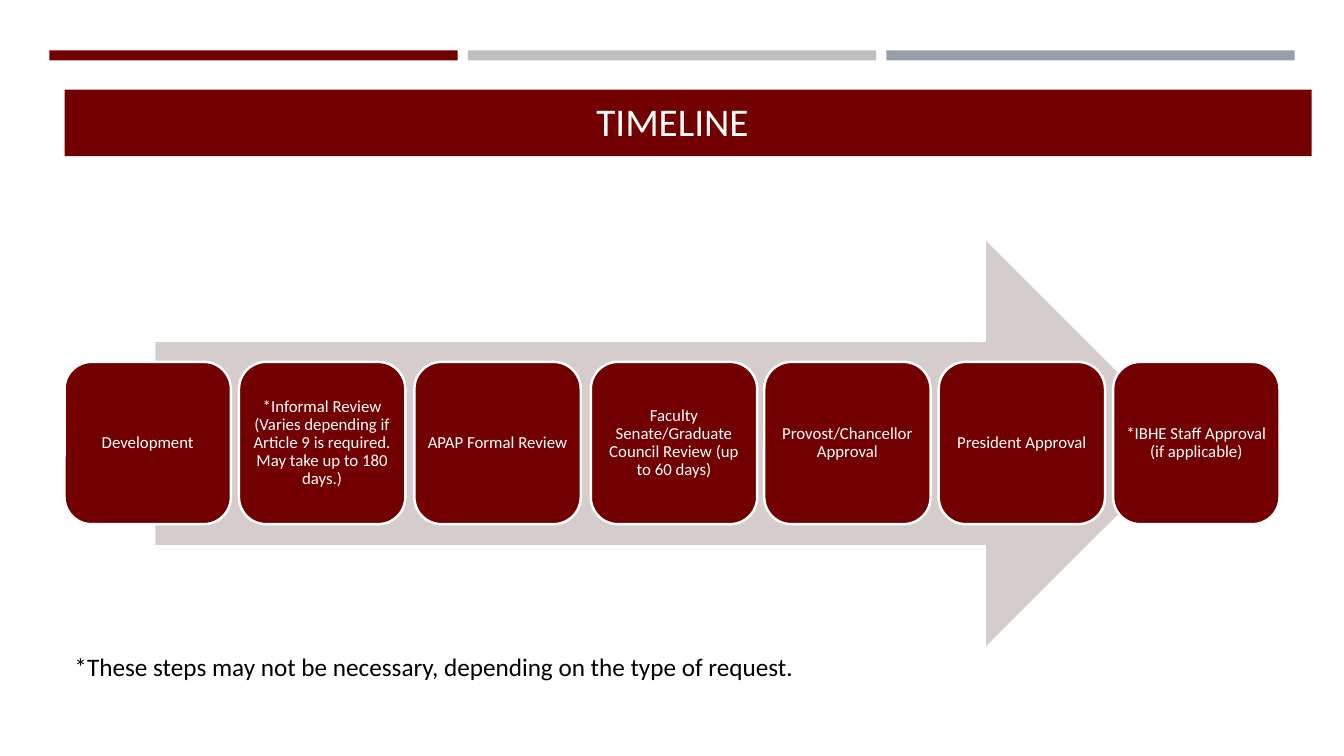
"""Build the approval timeline slide."""
from pptx import Presentation
from pptx.dml.color import RGBColor
from pptx.enum.shapes import MSO_SHAPE as Shape
from pptx.enum.text import MSO_ANCHOR as Anchor, MSO_AUTO_SIZE as AutoSize, PP_ALIGN as Align
from pptx.util import Inches, Pt

MAROON, WHITE = "720000", "FFFFFF"


def add_block(kind, left, top, width, height, color):
    block = page.shapes.add_shape(kind, Inches(left), Inches(top), Inches(width), Inches(height))
    block.shadow.inherit = False
    block.fill.solid()
    block.fill.fore_color.rgb = RGBColor.from_string(color)
    block.line.fill.background()
    return block


def write_text(frame, text, size, color, align, anchor):
    frame.word_wrap = True
    frame.auto_size = AutoSize.NONE
    frame.vertical_anchor = anchor
    para = frame.paragraphs[0]
    para.text = text
    para.alignment = align
    para.font.name = "Calibri"
    para.font.size = Pt(size)
    para.font.color.rgb = RGBColor.from_string(color)
    return para


deck = Presentation()
deck.slide_width, deck.slide_height = Inches(13.33), Inches(7.5)
page = deck.slides.add_slide(deck.slide_layouts[5])

for index, color in enumerate([MAROON, "BFBFBF", "969FA7"]):
    add_block(Shape.RECTANGLE, 0.49 + 4.15 * index, 0.5, 4.05, 0.1, color)
title_band = add_block(Shape.RECTANGLE, 0.64, 0.89, 12.37, 0.66, MAROON)

title = page.shapes.title
title_band.element.addnext(title.element)
title.left, title.top = Inches(0.64), Inches(0.89)
title.width, title.height = Inches(12.06), Inches(0.59)
write_text(title.text_frame, "TIMELINE", 28, WHITE, Align.CENTER, Anchor.BOTTOM)

add_block(Shape.RIGHT_ARROW, 1.54, 2.39, 10.25, 4.02, "D5CCCC")

steps = [
    (0.64, "Development"),
    (2.37, "*Informal Review (Varies depending if Article 9 is required. May take up to 180 days.)"),
    (4.11, "APAP Formal Review"),
    (5.86, "Faculty Senate/Graduate Council Review (up to 60 days)"),
    (7.58, "Provost/Chancellor Approval"),
    (9.31, "President Approval"),
    (11.04, "*IBHE Staff Approval (if applicable)"),
]
for left, label in steps:
    step = add_block(Shape.ROUNDED_RECTANGLE, left, 3.59, 1.65, 1.61, MAROON)
    step.line.color.rgb = RGBColor.from_string(WHITE)
    step.line.width = Pt(1.75)
    frame = step.text_frame
    frame.margin_left = frame.margin_right = Inches(0.05)
    frame.margin_top = frame.margin_bottom = Inches(0.05)
    para = write_text(frame, label, 12, WHITE, Align.CENTER, Anchor.MIDDLE)
    para.line_spacing = 0.9

footnote = page.shapes.add_textbox(Inches(0.64), Inches(6.41), Inches(11.18), Inches(0.4))
write_text(footnote.text_frame, "*These steps may not be necessary, depending on the type of request.",
           18, "000000", Align.LEFT, Anchor.TOP)

deck.save("out.pptx")
